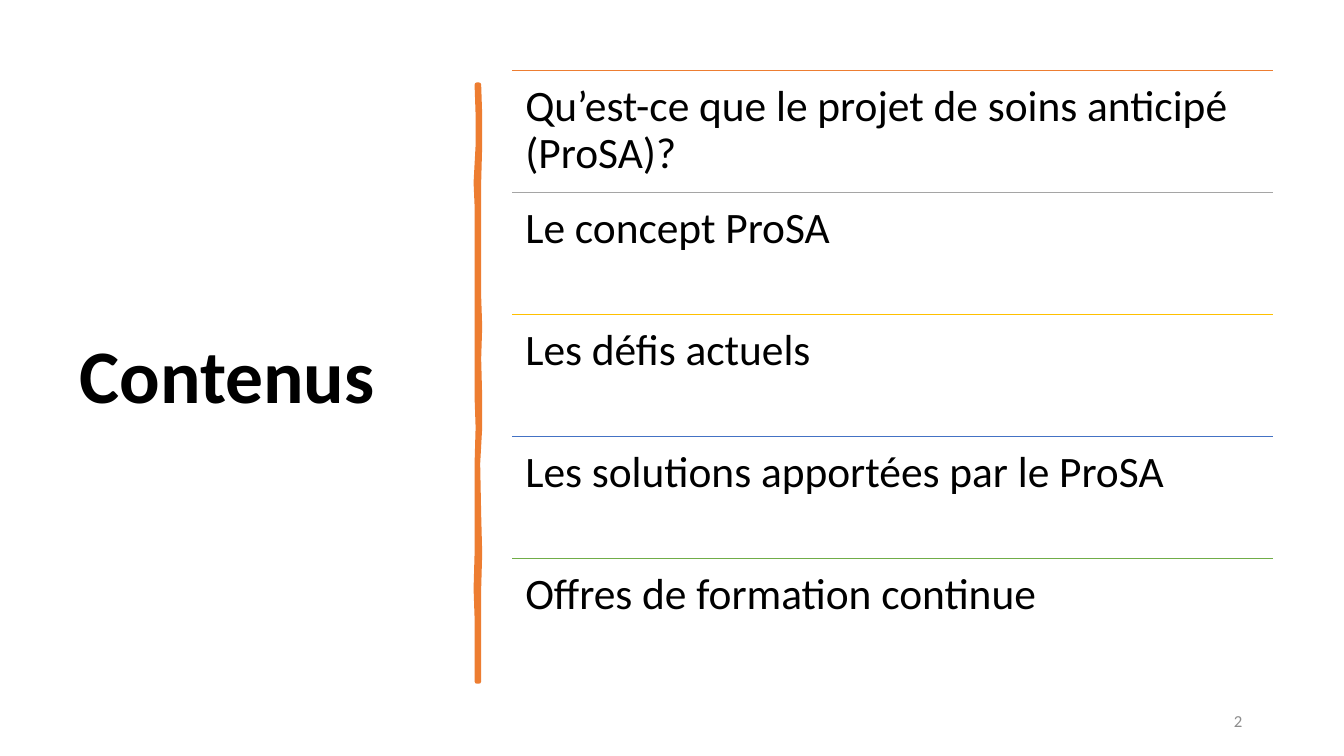
import pptx
import pptx.dml.color
import pptx.enum.shapes
import pptx.enum.text
import pptx.oxml.ns
import pptx.util
from pptx.util import Inches

TOPICS = [
    ("Qu’est-ce que le projet de soins anticipé (ProSA)?", "ED7D31"),
    ("Le concept ProSA", "A5A5A5"),
    ("Les défis actuels", "FFC000"),
    ("Les solutions apportées par le ProSA", "4472C4"),
    ("Offres de formation continue", "70AD47"),
]
BRUSH_EDGES = [
    (0, 0, 0.02), (0.3, 0.01, 0.03), (0.6, 0.01, 0.03), (0.97, -0.01, 0.02),
    (1.2, 0, 0.02), (1.66, 0, 0.02), (2.1, 0, 0.02), (2.4, 0, 0.03),
    (2.72, 0, 0.02), (3.1, 0, 0.03), (3.4, 0.01, 0.03), (3.76, 0, 0.01),
    (4.26, 0, 0.02), (4.65, 0, 0.03), (5, -0.01, 0.02), (5.29, 0, 0.02),
    (5.6, 0, 0.02), (5.92, 0, 0.02),
]


def color(hex_value):
    return pptx.dml.color.RGBColor.from_string(hex_value)


def add_text(slide, box, text, size, hex_value, anchor, bold=False, inset=None):
    label = slide.shapes.add_textbox(*map(Inches, box))
    frame = label.text_frame
    frame.text = text
    frame.word_wrap = True
    frame.vertical_anchor = anchor
    if inset is not None:
        frame.margin_left = frame.margin_right = Inches(inset)
        frame.margin_top = frame.margin_bottom = Inches(inset)
    paragraph = frame.paragraphs[0]
    font = paragraph.runs[0].font
    font.name = "Calibri"
    font.size = pptx.util.Pt(size)
    font.bold = bold
    font.color.rgb = color(hex_value)
    return paragraph


def add_title(slide, box):
    title = add_text(slide, box, "Contenus", 54, "000000",
                     pptx.enum.text.MSO_ANCHOR.MIDDLE, bold=True)
    title.line_spacing = 0.9


def add_brush_stroke(slide, left, top):
    left_edge = [(left + x, top + y) for y, x, _ in BRUSH_EDGES]
    right_edge = [(left + x, top + y) for y, _, x in BRUSH_EDGES]
    outline = [(Inches(x), Inches(y)) for x, y in right_edge + left_edge[::-1]]
    builder = slide.shapes.build_freeform(*outline[0])
    builder.add_line_segments(outline[1:], close=True)
    stroke = builder.convert_to_shape()
    stroke.shadow.inherit = False
    stroke.fill.solid()
    stroke.fill.fore_color.rgb = color("ED7D31")
    stroke.line.color.rgb = color("ED7D31")
    stroke.line.width = pptx.util.Pt(3.25)


def add_rule(slide, left, top, width, hex_value):
    rule = slide.shapes.add_connector(
        pptx.enum.shapes.MSO_CONNECTOR.STRAIGHT,
        Inches(left), Inches(top), Inches(left + width), Inches(top))
    rule.line.color.rgb = color(hex_value)
    rule.line.width = pptx.util.Pt(1)
    properties = rule._element.spPr
    properties.append(properties.makeelement(pptx.oxml.ns.qn("a:effectLst"), {}))


def add_topics(slide, box):
    left, top, width, height = box
    row_height = height / len(TOPICS)
    for row, (topic, hex_value) in enumerate(TOPICS):
        row_top = top + row * row_height
        add_rule(slide, left, row_top, width, hex_value)
        entry = add_text(slide, (left, row_top, width, row_height), topic, 31,
                         "000000", pptx.enum.text.MSO_ANCHOR.TOP, inset=0.13)
        entry.line_spacing = 0.9


def add_page_number(slide, box):
    number = add_text(slide, box, "2", 12, "8C8C8C",
                      pptx.enum.text.MSO_ANCHOR.MIDDLE)
    number.alignment = pptx.enum.text.PP_ALIGN.RIGHT
    number.space_after = pptx.util.Pt(6)


def main():
    deck = pptx.Presentation()
    deck.slide_width = Inches(13.33)
    deck.slide_height = Inches(7.5)
    slide = deck.slides.add_slide(deck.slide_layouts[6])
    add_title(slide, (0.69, 0.7, 3.74, 6.11))
    add_brush_stroke(slide, 4.73, 0.84)
    add_page_number(slide, (9.42, 6.95, 3, 0.4))
    add_topics(slide, (5.08, 0.7, 7.55, 6.05))
    deck.save("out.pptx")


if __name__ == "__main__":
    main()
